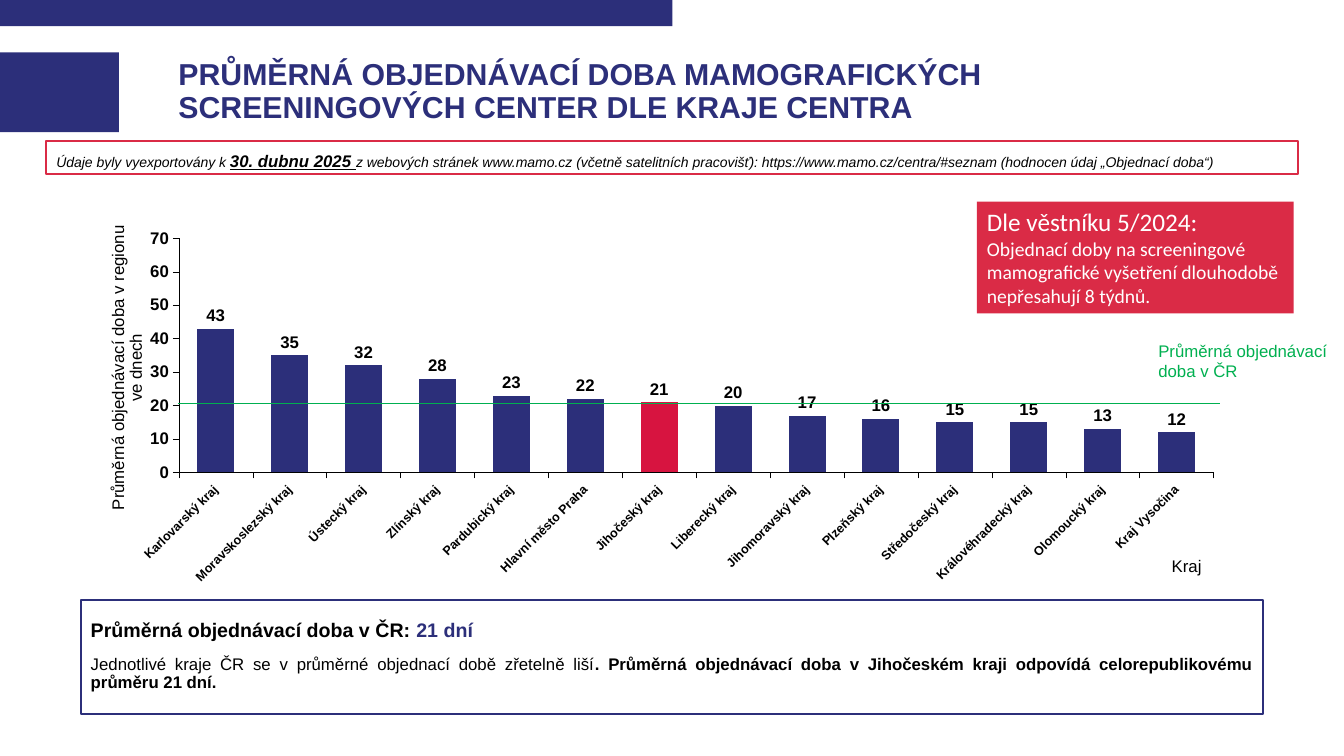
from lxml import etree
from pptx import Presentation
from pptx.chart.data import CategoryChartData
from pptx.dml.color import RGBColor
from pptx.enum.chart import XL_CHART_TYPE, XL_LABEL_POSITION, XL_TICK_MARK
from pptx.enum.shapes import MSO_CONNECTOR, MSO_SHAPE
from pptx.enum.text import MSO_ANCHOR, MSO_AUTO_SIZE, PP_ALIGN
from pptx.oxml.ns import qn
from pptx.util import Inches, Pt

COLUMN = XL_CHART_TYPE.COLUMN_CLUSTERED
OUTSIDE = XL_LABEL_POSITION.OUTSIDE_END
TICK, NO_TICK = XL_TICK_MARK.OUTSIDE, XL_TICK_MARK.NONE
RECT, STRAIGHT = MSO_SHAPE.RECTANGLE, MSO_CONNECTOR.STRAIGHT
TOP, MIDDLE = MSO_ANCHOR.TOP, MSO_ANCHOR.MIDDLE
FIXED = MSO_AUTO_SIZE.NONE
LEFT, JUSTIFY = PP_ALIGN.LEFT, PP_ALIGN.JUSTIFY
COLORS = {"navy": "2C2F7A", "red": "DA2B46", "bar": "D71440",
          "green": "00B050", "black": "000000", "white": "FFFFFF"}
REGIONS = {
    "Karlovarský kraj": 43, "Moravskoslezský kraj": 35, "Ústecký kraj": 32,
    "Zlínský kraj": 28, "Pardubický kraj": 23, "Hlavní město Praha": 22,
    "Jihočeský kraj": 21, "Liberecký kraj": 20, "Jihomoravský kraj": 17,
    "Plzeňský kraj": 16, "Středočeský kraj": 15, "Královéhradecký kraj": 15,
    "Olomoucký kraj": 13, "Kraj Vysočina": 12}
FOCUS = "Jihočeský kraj"


def tint(name):
    """Return the named colour."""
    return RGBColor.from_string(COLORS[name])


def style(font, size, color="black", bold=False, face="Arial"):
    """Set the look of a font."""
    font.name, font.size, font.bold = face, Pt(size), bold
    font.color.rgb = tint(color)


def add_run(para, text, size, color="black", bold=False, face="Arial"):
    """Add a styled run and return its font."""
    run = para.add_run()
    run.text = text
    style(run.font, size, color, bold, face)
    return run.font


def move(shape, box):
    """Put a shape in a box given in inches."""
    shape.left, shape.top, shape.width, shape.height = map(Inches, box)


def frame(shape, anchor=TOP):
    """Prepare the text frame of a shape."""
    text = shape.text_frame
    text.word_wrap, text.auto_size = True, FIXED
    text.vertical_anchor = anchor
    return text


def add_rect(slide, box, fill=None, line=None):
    """Draw a plain rectangle."""
    shape = slide.shapes.add_shape(RECT, *map(Inches, box))
    shape.shadow.inherit = False
    outline(shape, line)
    if fill:
        shape.fill.solid()
        shape.fill.fore_color.rgb = tint(fill)
    else:
        shape.fill.background()
    return shape


def outline(shape, color):
    """Give a shape a border or none."""
    if color:
        shape.line.color.rgb = tint(color)
        shape.line.width = Pt(1.5)
    else:
        shape.line.fill.background()


def add_head(slide, box):
    """Place the title with its bands."""
    left, top, _, height = box
    add_rect(slide, (0, 0, 6.67, 0.26), "navy")
    add_rect(slide, (0, top, left - 0.59, height), "navy")
    title = slide.shapes.title
    move(title, box)
    text = frame(title, MIDDLE)
    text.margin_left = 0
    para = text.paragraphs[0]
    para.alignment, para.line_spacing = LEFT, 0.9
    add_run(para, "PRŮMĚRNÁ OBJEDNÁVACÍ DOBA MAMOGRAFICKÝCH "
            "SCREENINGOVÝCH CENTER DLE KRAJE CENTRA", 21.6, "navy", True)


def add_note(slide, box):
    """Add the framed line on the data source."""
    para = frame(add_rect(slide, box, line="red")).paragraphs[0]
    para.alignment, para.line_spacing = JUSTIFY, 1.24
    for text, size, strong in (
            ("Údaje byly vyexportovány k ", 10, False),
            ("30. dubnu 2025 ", 12, True),
            ("z webových stránek www.mamo.cz (včetně satelitních pracovišť): "
             "https://www.mamo.cz/centra/#seznam "
             "(hodnocen údaj „Objednací doba“)", 10, False)):
        font = add_run(para, text, size, bold=strong)
        font.italic, font.underline = True, strong


def set_place(node, index, **parts):
    """Give a chart part a manual layout."""
    for old in node.findall(qn("c:layout")):
        node.remove(old)
    layout = etree.Element(qn("c:layout"))
    manual = etree.SubElement(layout, qn("c:manualLayout"))
    for tag, value in parts.items():
        etree.SubElement(manual, qn("c:" + tag)).set("val", str(value))
    node.insert(index, layout)


def set_axis(axis, title, size, x, y):
    """Format an axis and its title."""
    axis.has_major_gridlines = False
    axis.major_tick_mark, axis.minor_tick_mark = TICK, NO_TICK
    axis.format.line.color.rgb = tint("black")
    axis.format.line.width = Pt(0.25)
    style(axis.tick_labels.font, size, bold=True)
    head = axis.axis_title
    add_run(head.text_frame.paragraphs[0], title, 12)
    set_place(head._element, 1, xMode="edge", yMode="edge", x=x, y=y)


def turn(node, angle):
    """Rotate the text of a chart part."""
    body = node.find(".//" + qn("a:bodyPr"))
    body.set("rot", str(angle * 60000))
    body.set("vert", "horz")


def add_bars(slide, box):
    """Add the column chart of waiting times."""
    data = CategoryChartData(number_format="#,##0")
    data.categories = list(REGIONS)
    data.add_series("Series 1", list(REGIONS.values()))
    chart = slide.shapes.add_chart(COLUMN, *map(Inches, box), data).chart
    chart.has_legend = chart.has_title = False
    style(chart.font, 12, bold=True)
    plot = chart.plots[0]
    plot.gap_width, plot.overlap, plot.vary_by_categories = 100, 100, False
    series = plot.series[0]
    series.format.fill.solid()
    series.format.fill.fore_color.rgb = tint("navy")
    fill = series.points[list(REGIONS).index(FOCUS)].format.fill
    fill.solid()
    fill.fore_color.rgb = tint("bar")
    labels = series.data_labels
    labels.show_value, labels.position = True, OUTSIDE
    labels.number_format, labels.number_format_is_linked = "#,##0", False
    style(labels.font, 12, bold=True)
    cats, vals = chart.category_axis, chart.value_axis
    set_axis(cats, "Kraj", 9, 0.92, 0.88)
    set_axis(vals, "Průměrná objednávací doba v\u00a0regionu ve dnech",
             12, 0.02, 0.03)
    vals.minimum_scale, vals.maximum_scale, vals.major_unit = 0, 70, 10
    turn(cats._element.find(qn("c:txPr")), -45)
    turn(vals.axis_title._element, -90)
    area = chart._chartSpace.find(".//" + qn("c:plotArea"))
    set_place(area, 0, layoutTarget="inner", xMode="edge", yMode="edge",
              x=0.083, y=0.071, w=0.875, h=0.602)


def add_mean(slide, box):
    """Add the line of the national mean and its label."""
    left, top, width, height = box
    base = top + height
    line = slide.shapes.add_connector(
        STRAIGHT, *map(Inches, (left, base, left + width, base)))
    line.line.color.rgb = tint("green")
    line.line.width = Pt(1)
    etree.SubElement(line._element.spPr, qn("a:effectLst"))
    label = slide.shapes.add_textbox(
        *map(Inches, (left + 9.62, top, 1.94, 0.5)))
    add_run(frame(label).paragraphs[0], "Průměrná objednávací doba v ČR",
            12, "green")


def add_rule(slide, box):
    """Add the red callout with the official limit."""
    para = frame(add_rect(slide, box, "red")).paragraphs[0]
    para.alignment = LEFT
    add_run(para, "Dle věstníku 5/2024: ", 18, "white", face="Calibri")
    para.add_line_break()
    add_run(para, "Objednací doby na screeningové mamografické vyšetření "
            "dlouhodobě nepřesahují 8 týdnů.", 14, "white", face="Calibri")


def add_sum(slide, box):
    """Fill the body with the framed summary."""
    body = slide.placeholders[1]
    move(body, box)
    outline(body, "navy")
    text = frame(body, MIDDLE)
    lines = (
        (("Průměrná objednávací doba v ČR: ", 14, "black", True),
         ("21 dní", 14, "navy", True)),
        (("Jednotlivé kraje ČR se v průměrné objednací době zřetelně liší",
          12, "black", False),
         (". Průměrná objednávací doba v Jihočeském kraji odpovídá "
          "celorepublikovému průměru 21 dní.", 12, "black", True)))
    for i, runs in enumerate(lines):
        para = text.add_paragraph() if i else text.paragraphs[0]
        para.alignment, para.line_spacing = JUSTIFY, 0.9
        para.space_before = Pt(10 if i else 0)
        props = para._p.get_or_add_pPr()
        props.set("marL", "0")
        props.set("indent", "0")
        etree.SubElement(props, qn("a:buNone"))
        for run in runs:
            add_run(para, *run)


def main():
    """Build and save the slide."""
    deck = Presentation()
    deck.slide_width, deck.slide_height = Inches(13.33), Inches(7.5)
    slide = deck.slides.add_slide(deck.slide_layouts[1])
    add_head(slide, (1.77, 0.52, 10.72, 0.79))
    add_note(slide, (0.46, 1.4, 12.41, 0.33))
    add_bars(slide, (0.8, 2.09, 11.73, 3.86))
    add_mean(slide, (1.77, 3.33, 10.33, 0.67))
    add_rule(slide, (9.69, 2, 3.14, 1.11))
    add_sum(slide, (0.8, 5.95, 11.73, 1.13))
    deck.save("out.pptx")


if __name__ == "__main__":
    main()
